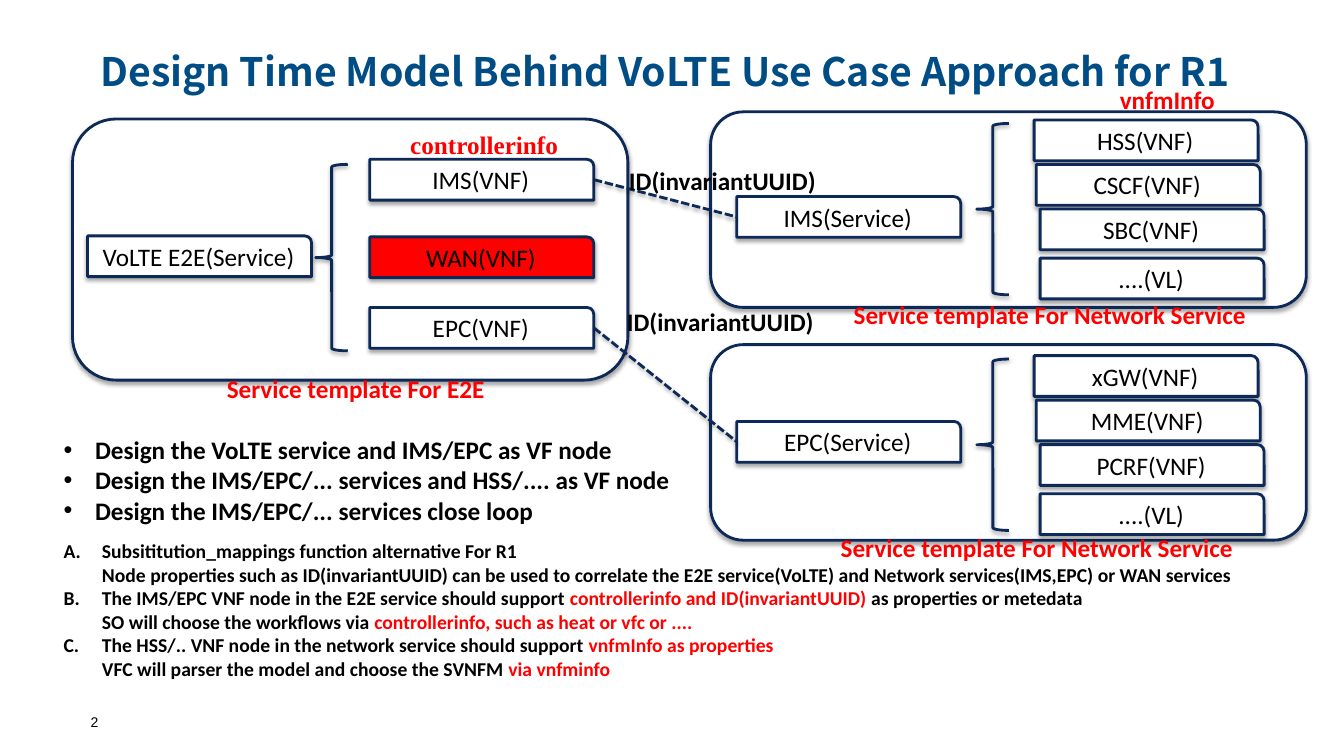
from dataclasses import dataclass

from lxml import etree
from pptx import Presentation
from pptx import util as u
from pptx.dml.color import RGBColor
from pptx.enum import dml, shapes, text
from pptx.oxml.ns import qn


@dataclass(frozen=True)
class Theme:
    navy: str = "0D2957"
    blue: str = "004D86"
    red: str = "FF0000"
    black: str = "000000"
    white: str = "FFFFFF"
    body_font: str = "Calibri"
    title_font: str = "Noto Sans CJK SC"
    serif_font: str = "Times New Roman"
    number_font: str = "Arial"
    title_size: float = 28
    body_size: float = 18
    detail_size: float = 14
    number_size: float = 10
    line_width: float = 2
    inset: float = 3.6
    card_width: float = 160
    card_height: float = 29.1


class Board:
    def __init__(self, slide, theme):
        self.slide = slide
        self.theme = theme

    def outline(self, part):
        """Navy line with a soft shadow straight below."""
        part.line.color.rgb = RGBColor.from_string(self.theme.navy)
        part.line.width = u.Pt(self.theme.line_width)
        effects = etree.SubElement(part._element.spPr, qn("a:effectLst"))
        shadow = etree.SubElement(effects, qn("a:outerShdw"), blurRad=str(u.Pt(3)),
                                  dist=str(u.Pt(1.8)), dir="5400000", rotWithShape="0")
        tint = etree.SubElement(shadow, qn("a:srgbClr"), val=self.theme.black)
        etree.SubElement(tint, qn("a:alpha"), val="35000")

    def style(self, run, size, color, font=None, bold=True):
        run.font.name = font or self.theme.body_font
        run.font.size = u.Pt(size)
        run.font.bold = bold
        run.font.color.rgb = RGBColor.from_string(color)

    def frame(self, part, inset):
        frame = part.text_frame
        frame.word_wrap = True
        frame.margin_left = frame.margin_right = u.Pt(inset)
        frame.margin_top = frame.margin_bottom = u.Pt(inset)
        return frame

    def box(self, kind, left, top, width, height, fill=None):
        part = self.slide.shapes.add_shape(
            kind, u.Pt(left), u.Pt(top), u.Pt(width), u.Pt(height))
        if fill:
            part.fill.solid()
            part.fill.fore_color.rgb = RGBColor.from_string(fill)
        else:
            part.fill.background()
        self.outline(part)
        return part

    def panel(self, left, top, width, height):
        self.box(shapes.MSO_SHAPE.ROUNDED_RECTANGLE, left, top, width, height, self.theme.white)

    def brace(self, left, top, height):
        self.box(shapes.MSO_SHAPE.LEFT_BRACE, left, top, 23, height)

    def card(self, caption, left, top, fill=None):
        card = self.box(shapes.MSO_SHAPE.ROUND_1_RECTANGLE, left, top, self.theme.card_width,
                        self.theme.card_height, fill or self.theme.white)
        frame = self.frame(card, self.theme.inset)
        frame.vertical_anchor = text.MSO_ANCHOR.MIDDLE
        frame.text = caption
        paragraph = frame.paragraphs[0]
        paragraph.alignment = text.PP_ALIGN.CENTER
        self.style(paragraph.runs[0], self.theme.body_size, self.theme.black, bold=False)
        return card

    def link(self, source, target):
        """Dashed line from a right side to a left side."""
        line = self.slide.shapes.add_connector(shapes.MSO_CONNECTOR.STRAIGHT, 0, 0, 0, 0)
        line.begin_connect(source, 3)
        line.end_connect(target, 1)
        self.outline(line)
        line.line.dash_style = dml.MSO_LINE.SQUARE_DOT

    def textbox(self, left, top, width, height, inset=None):
        part = self.slide.shapes.add_textbox(u.Pt(left), u.Pt(top), u.Pt(width), u.Pt(height))
        return self.frame(part, self.theme.inset if inset is None else inset)

    def label(self, caption, left, top, width, color, font=None):
        frame = self.textbox(left, top, width, self.theme.card_height)
        frame.text = caption
        self.style(frame.paragraphs[0].runs[0], self.theme.body_size, color, font)

    def items(self, rows, left, top, width, height, size, indent):
        """Rows are (marker, runs); odd runs are red. A number marks a letter, None no mark."""
        frame = self.textbox(left, top, width, height)
        for index, (marker, pieces) in enumerate(rows):
            paragraph = frame.add_paragraph() if index else frame.paragraphs[0]
            props = paragraph._p.get_or_add_pPr()
            props.set("marL", str(u.Pt(indent)))
            props.set("indent", str(-u.Pt(indent) if marker else 0))
            if marker is None:
                etree.SubElement(props, qn("a:buNone"))
            elif isinstance(marker, int):
                etree.SubElement(props, qn("a:buAutoNum"), type="alphaUcPeriod",
                                 startAt=str(marker))
            else:
                etree.SubElement(props, qn("a:buFont"), typeface=self.theme.number_font)
                etree.SubElement(props, qn("a:buChar"), char=marker)
            for order, piece in enumerate(pieces):
                run = paragraph.add_run()
                run.text = piece
                self.style(run, size, self.theme.red if order % 2 else self.theme.black)


def main():
    deck = Presentation()
    deck.slide_width, deck.slide_height = u.Pt(960), u.Pt(540)
    theme = Theme()
    board = Board(deck.slides.add_slide(deck.slide_layouts[6]), theme)

    # Title and slide number
    heading = board.textbox(64.8, 26.6, 854, 48.2, 0)
    heading.margin_left = u.Pt(7.2)
    heading.vertical_anchor = text.MSO_ANCHOR.MIDDLE
    heading.text = "Design Time Model Behind VoLTE Use Case Approach for R1"
    board.style(heading.paragraphs[0].runs[0], theme.title_size, theme.blue, theme.title_font)
    number = board.textbox(64.8, 511.2, 165, 20, 0)
    number.text = "2"
    number.paragraphs[0].line_spacing = 0.85
    board.style(number.paragraphs[0].runs[0], theme.number_size, theme.black,
                theme.number_font, bold=False)

    # End-to-end service
    board.panel(51.8, 85, 396.7, 186.5)
    board.card("VoLTE E2E(Service)", 62.6, 168.5)
    ims_node = board.card("IMS(VNF)", 264.2, 113.8)
    epc_node = board.card("EPC(VNF)", 264.2, 219.6)
    board.card("WAN(VNF)", 264.2, 169.2, theme.red)
    board.brace(225.4, 117.4, 133.2)

    # Network services: node, service name, panel top, service top, first function top, functions
    networks = [
        (ims_node, "IMS(Service)", 79.9, 140.4, 85.7, ("HSS(VNF)", "CSCF(VNF)", "SBC(VNF)")),
        (epc_node, "EPC(Service)", 246.2, 301, 254, ("xGW(VNF)", "MME(VNF)", "PCRF(VNF)")),
    ]
    function_offsets = [(0, 0), (1.5, 31.8), (4.3, 63.6), (4.3, 98.7)]
    for node, service_name, panel_top, service_top, first_top, functions in networks:
        board.panel(507.6, panel_top, 425.5, 139.7)
        service = board.card(service_name, 526.3, service_top)
        board.brace(697.7, first_top + 2.5, 122.4)
        for function, (shift, drop) in zip((*functions, "....(VL)"), function_offsets):
            board.card(function, 738.7 + shift, first_top + drop)
        board.link(node, service)

    # Labels
    for caption, left, top, width, color, font in [
        ("ID(invariantUUID)", 444.2, 215.3, 190.8, theme.black, None),
        ("ID(invariantUUID)", 445.7, 114.5, 158.4, theme.black, None),
        ("controllerinfo", 289.4, 88.6, 120, theme.red, theme.serif_font),
        ("vnfmInfo", 796.3, 56.9, 80, theme.red, None),
        ("Service template For E2E", 158.4, 262.8, 237.6, theme.red, None),
        ("Service template For Network Service", 596.9, 376.6, 322.6, theme.red, None),
        ("Service template For Network Service", 606.2, 210.2, 350, theme.red, None),
    ]:
        board.label(caption, left, top, width, color, font)

    # Design steps
    steps = ["Design the VoLTE service and IMS/EPC as VF node",
             "Design the IMS/EPC/... services and HSS/.... as VF node",
             "Design the IMS/EPC/... services close loop"]
    board.items([("•", [step]) for step in steps],
                41.8, 306.7, 484.6, 72.7, theme.body_size, 22.5)

    # Modelling notes
    notes = [
        (1, ["Subsititution_mappings function alternative For R1"]),
        (None, ["Node properties such as ID(invariantUUID) can be used to correlate the E2E "
                "service(VoLTE) and Network services(IMS,EPC) or WAN services"]),
        (2, ["The IMS/EPC VNF node in the E2E service should support ",
             "controllerinfo and ID(invariantUUID) ", "as properties or metedata"]),
        (None, ["SO will choose the workflows via ", "controllerinfo, such as heat or vfc or ...."]),
        (3, ["The HSS/.. VNF node in the network service should support ",
             "vnfmInfo as properties"]),
        (None, ["VFC will parser the model and choose the SVNFM ", "via vnfminfo"]),
    ]
    board.items(notes, 41.8, 381.6, 901.4, 108.7, theme.detail_size, 27.4)

    deck.save("out.pptx")


if __name__ == "__main__":
    main()
